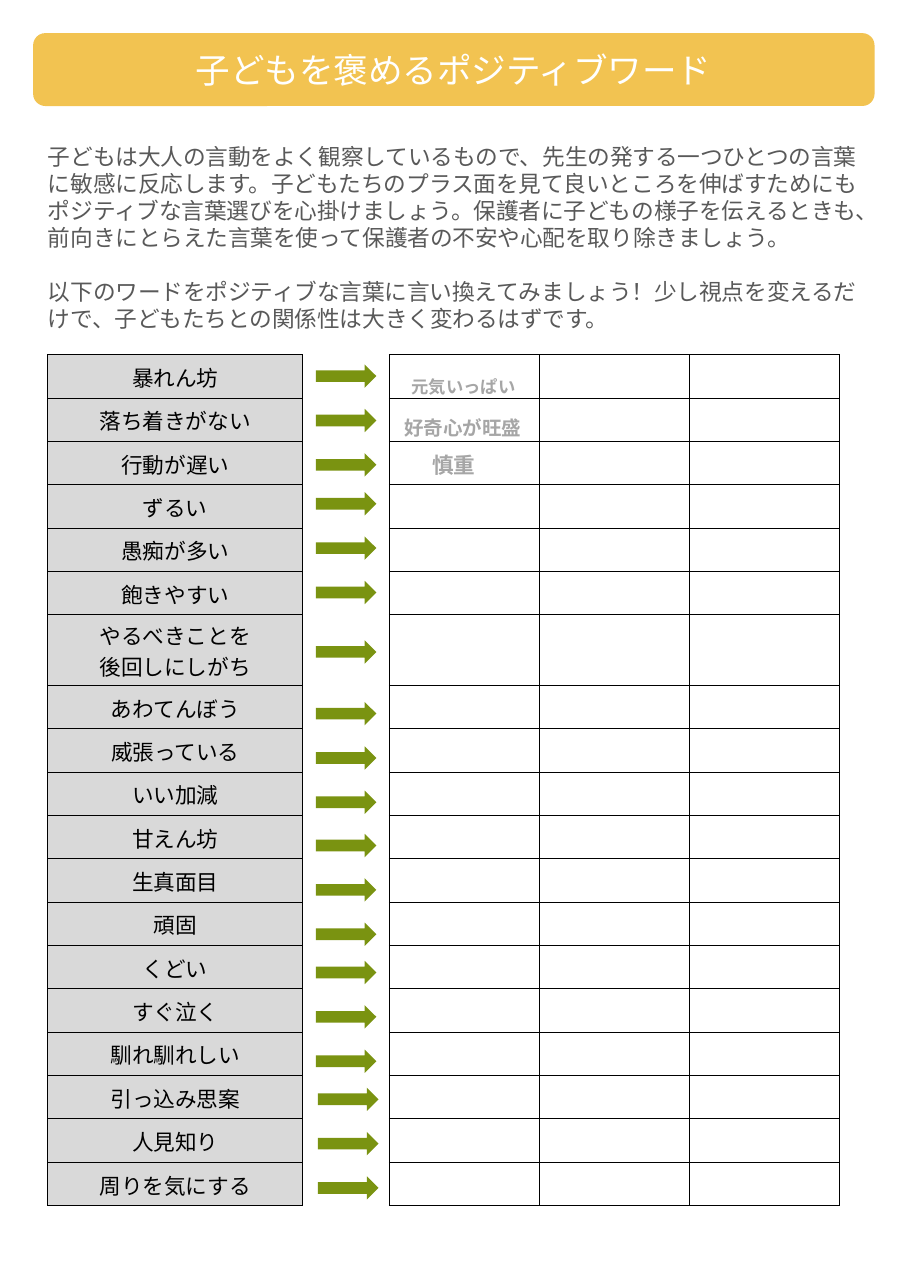
from lxml.etree import SubElement
from pptx import Presentation
from pptx.dml.color import RGBColor
from pptx.enum.shapes import MSO_SHAPE as Preset
from pptx.enum.text import MSO_ANCHOR as Anchor, MSO_AUTO_SIZE as AutoSize, PP_ALIGN as Align
from pptx.oxml.ns import qn
from pptx.util import Pt

COLORS = {
    "banner": "F2C351", "title": "FFFFFF", "intro": "595959", "word": "000000",
    "word_fill": "D9D9D9", "example": "A6A6A6", "border": "000000", "arrow": "7A9311",
}
JAPANESE = "Noto Sans CJK JP"

TITLE = "子どもを褒めるポジティブワード"
INTRO = [
    "子どもは大人の言動をよく観察しているもので、先生の発する一つひとつの言葉に敏感に反応します。"
    "子どもたちのプラス面を見て良いところを伸ばすためにもポジティブな言葉選びを心掛けましょう。"
    "保護者に子どもの様子を伝えるときも、前向きにとらえた言葉を使って保護者の不安や心配を取り除きましょう。",
    "以下のワードをポジティブな言葉に言い換えてみましょう！"
    "少し視点を変えるだけで、子どもたちとの関係性は大きく変わるはずです。",
]
WORDS = [
    "暴れん坊", "落ち着きがない", "行動が遅い", "ずるい", "愚痴が多い", "飽きやすい",
    "やるべきことを\n後回しにしがち", "あわてんぼう", "威張っている", "いい加減",
    "甘えん坊", "生真面目", "頑固", "くどい", "すぐ泣く", "馴れ馴れしい",
    "引っ込み思案", "人見知り", "周りを気にする",
]
# text, size, left indent, anchor
EXAMPLES = [
    ("元気いっぱい", 8, 9.5, Anchor.BOTTOM),
    ("好奇心が旺盛", 9, 6.2, Anchor.BOTTOM),
    ("慎重", 10, 19.2, Anchor.MIDDLE),
]
# left, top of the first arrow, number of arrows
ARROW_GROUPS = [
    (146, 168.5, 3), (146, 227.5, 3), (146, 296, 1), (146, 324.5, 3),
    (146, 385.5, 3), (146, 444.2, 3), (147, 502.8, 3),
]
ARROW_STEP = 20.5
ROW_HEIGHTS = [32.6 if "\n" in word else 20.05 for word in WORDS]
TABLE_TOP = 164


class Worksheet:
    def __init__(self, width, height):
        self.presentation = Presentation()
        self.presentation.slide_width = Pt(width)
        self.presentation.slide_height = Pt(height)
        self.slide = self.presentation.slides.add_slide(self.presentation.slide_layouts[5])

    @staticmethod
    def apply(target, formats):
        for name, value in formats.items():
            setattr(target, name, value)

    def format_text(self, frame, size, color, font=JAPANESE, bold=False, **paragraph_formats):
        for paragraph in frame.paragraphs:
            self.apply(paragraph, paragraph_formats)
            for run in paragraph.runs:
                self.apply(run.font, {"size": Pt(size), "name": font, "bold": bold})
                run.font.color.rgb = RGBColor.from_string(COLORS[color])
                if font == JAPANESE:
                    properties = run.font._element if hasattr(run.font, "_element") else run._r.get_or_add_rPr()
                    SubElement(properties, qn("a:ea"), typeface=font)

    def shape(self, preset, box, color):
        shape = self.slide.shapes.add_shape(preset, *map(Pt, box))
        shape.shadow.inherit = False
        shape.fill.solid()
        shape.fill.fore_color.rgb = RGBColor.from_string(COLORS[color])
        shape.line.fill.background()
        return shape

    def title(self, text, box):
        banner = self.shape(Preset.ROUNDED_RECTANGLE, box, "banner")
        title = self.slide.shapes.title
        self.apply(title, dict(zip(("left", "top", "width", "height"), map(Pt, box))))
        frame = title.text_frame
        frame.text = text
        self.apply(frame, {"vertical_anchor": Anchor.MIDDLE, "word_wrap": True,
                           "auto_size": AutoSize.NONE})
        self.format_text(frame, 16, "title", alignment=Align.CENTER)
        banner.element.addnext(title.element)

    def text_box(self, paragraphs, box):
        frame = self.slide.shapes.add_textbox(*map(Pt, box)).text_frame
        frame.word_wrap = True
        frame.text = "\n".join(paragraphs)
        self.format_text(frame, 10.5, "intro", line_spacing=Pt(12.5))
        frame.paragraphs[0].space_after = Pt(12.5)

    def table(self, left, top, column_width, columns):
        """Add a bordered table without banding, with one row per word."""
        frame = self.slide.shapes.add_table(
            len(ROW_HEIGHTS), columns, Pt(left), Pt(top),
            Pt(column_width * columns), Pt(sum(ROW_HEIGHTS)))
        table = frame.table
        self.apply(table, {"first_row": False, "horz_banding": False})
        for column in table.columns:
            column.width = Pt(column_width)
        for row, height in zip(table.rows, ROW_HEIGHTS):
            row.height = Pt(height)
        for cell in table.iter_cells():
            self.format_cell(cell)
        return table

    def format_cell(self, cell):
        margin = Pt(0.72)
        self.apply(cell, {"margin_left": margin, "margin_right": margin, "margin_top": margin,
                          "margin_bottom": 0, "vertical_anchor": Anchor.MIDDLE})
        properties = cell._tc.get_or_add_tcPr()
        for side in ("lnL", "lnR", "lnT", "lnB"):
            line = SubElement(properties, qn(f"a:{side}"), w=str(Pt(0.5)))
            fill = SubElement(line, qn("a:solidFill"))
            SubElement(fill, qn("a:srgbClr"), val=COLORS["border"])
        cell.fill.background()
        # Keeps empty cells from growing to the default text size
        SubElement(cell.text_frame.paragraphs[0]._p, qn("a:endParaRPr"), sz="1000")

    def word_table(self):
        table = self.table(22, TABLE_TOP, 118, 1)
        for row, word in enumerate(WORDS):
            cell = table.cell(row, 0)
            cell.fill.solid()
            cell.fill.fore_color.rgb = RGBColor.from_string(COLORS["word_fill"])
            cell.text_frame.text = word
            self.format_text(cell.text_frame, 10, "word", "Arial", alignment=Align.CENTER)

    def answer_table(self):
        table = self.table(180, TABLE_TOP, 69.4, 3)
        for row, (text, size, indent, anchor) in enumerate(EXAMPLES):
            cell = table.cell(row, 0)
            cell.vertical_anchor = anchor
            cell.text_frame.text = text
            self.format_text(cell.text_frame, size, "example", bold=True)
            paragraph = cell.text_frame.paragraphs[0]
            paragraph._p.get_or_add_pPr().set("marL", str(Pt(indent)))

    def arrows(self):
        for left, top, count in ARROW_GROUPS:
            for index in range(count):
                box = (left, top + index * ARROW_STEP, 28, 10.8)
                self.shape(Preset.RIGHT_ARROW, box, "arrow")


def main():
    worksheet = Worksheet(419.76, 595.44)
    worksheet.title(TITLE, (15.3, 15.3, 389, 33.7))
    worksheet.text_box(INTRO, (15.1, 62.5, 388.8, 96.5))
    worksheet.word_table()
    worksheet.answer_table()
    worksheet.arrows()
    worksheet.presentation.save("out.pptx")


if __name__ == "__main__":
    main()
